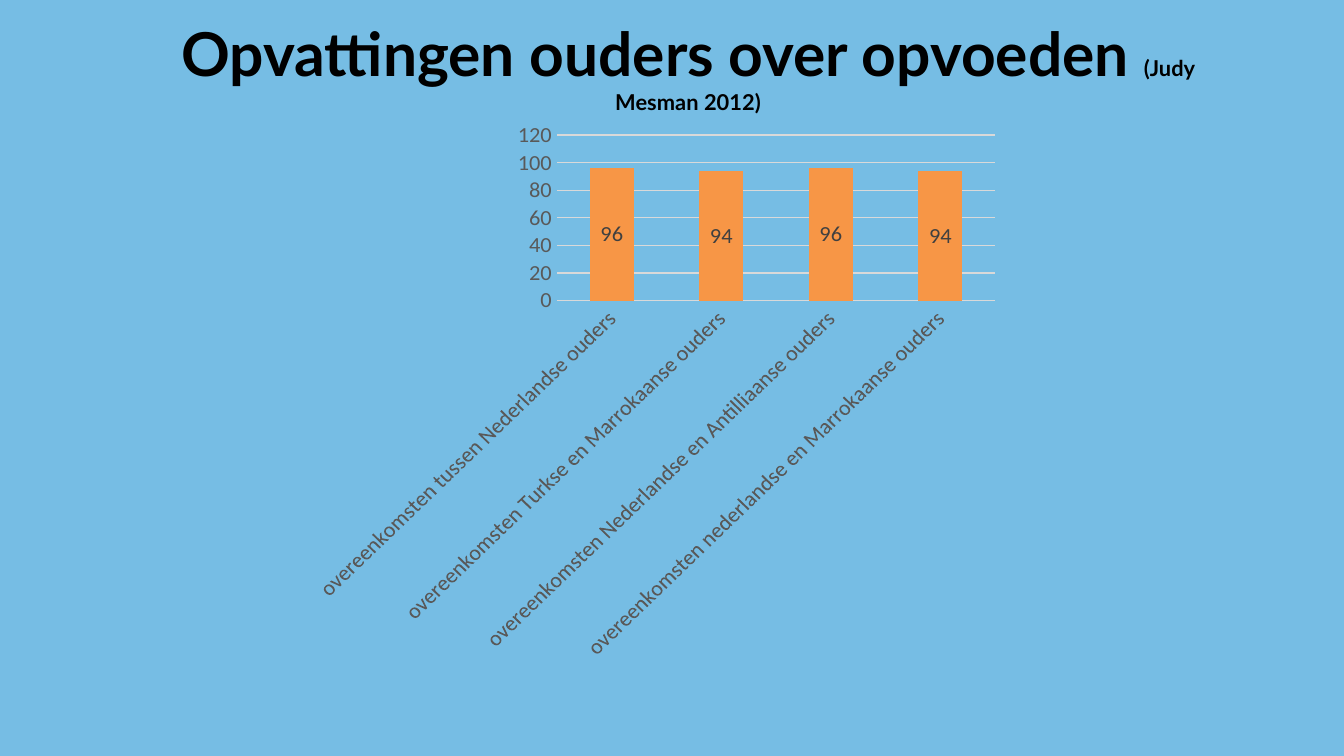
from pptx import Presentation
from pptx.chart.data import CategoryChartData
from pptx.dml.color import RGBColor
from pptx.enum.chart import XL_CHART_TYPE, XL_LABEL_POSITION, XL_TICK_MARK
from pptx.enum.text import MSO_ANCHOR, MSO_AUTO_SIZE, PP_ALIGN
from pptx.util import Inches, Pt

COLORS = {
    "background": "76BDE4",
    "title": "000000",
    "bar": "F79646",
    "axis": "595959",
    "grid": "D9D9D9",
    "label": "404040",
}

AGREEMENT = {
    "overeenkomsten tussen Nederlandse ouders": 96,
    "overeenkomsten Turkse en Marrokaanse ouders": 94,
    "overeenkomsten Nederlandse en Antilliaanse ouders": 96,
    "overeenkomsten nederlandse en Marrokaanse ouders": 94,
}


def rgb(name):
    return RGBColor.from_string(COLORS[name])


def style_font(font, name, size, color, bold=False):
    font.name = name
    font.size = Pt(size)
    font.bold = bold
    font.color.rgb = rgb(color)


def style_line(line, color):
    line.color.rgb = rgb(color)
    line.width = Pt(0.75)


def add_title(s, runs):
    sp = s.shapes.title
    sp.left, sp.top = Inches(1.12), Inches(0.07)
    sp.width, sp.height = Inches(8), Inches(1.21)
    tf = sp.text_frame
    tf.word_wrap = True
    tf.auto_size = MSO_AUTO_SIZE.NONE
    tf.vertical_anchor = MSO_ANCHOR.TOP
    p = tf.paragraphs[0]
    p.alignment = PP_ALIGN.CENTER
    for text, size in runs:
        r = p.add_run()
        r.text = text
        style_font(r.font, "Lato", size, "title", bold=True)


def style_axis(axis):
    axis.major_tick_mark = XL_TICK_MARK.NONE
    axis.minor_tick_mark = XL_TICK_MARK.NONE
    style_font(axis.tick_labels.font, "Calibri", 12, "axis")


def add_bar_chart(s, values):
    data = CategoryChartData()
    data.categories = list(values)
    data.add_series("Series 1", list(values.values()))
    chart = s.shapes.add_chart(
        XL_CHART_TYPE.COLUMN_CLUSTERED,
        Inches(2.23), Inches(0.91), Inches(5.28), Inches(4), data,
    ).chart
    chart.has_legend = False
    chart.has_title = False
    style_font(chart.font, "Calibri", 10, "title")

    cat_axis, val_axis = chart.category_axis, chart.value_axis
    style_axis(cat_axis)
    style_line(cat_axis.format.line, "grid")
    cat_axis._element.txPr.bodyPr.set("rot", "-2700000")
    style_axis(val_axis)
    val_axis.minimum_scale = 0
    val_axis.format.line.fill.background()
    val_axis.has_major_gridlines = True
    style_line(val_axis.major_gridlines.format.line, "grid")

    plot = chart.plots[0]
    plot.gap_width = 150
    plot.vary_by_categories = False
    series = plot.series[0]
    series.format.fill.solid()
    series.format.fill.fore_color.rgb = rgb("bar")
    labels = series.data_labels
    labels.show_value = True
    labels.position = XL_LABEL_POSITION.CENTER
    style_font(labels.font, "Calibri", 12, "label")


def main():
    prs = Presentation()
    prs.slide_width, prs.slide_height = Inches(10), Inches(10 * 9 / 16)
    s = prs.slides.add_slide(prs.slide_layouts[5])
    s.background.fill.solid()
    s.background.fill.fore_color.rgb = rgb("background")
    add_title(s, [("Opvattingen ouders over opvoeden ", 32.4), ("(Judy Mesman 2012)", 11.7)])
    add_bar_chart(s, AGREEMENT)
    prs.save("out.pptx")


if __name__ == "__main__":
    main()
